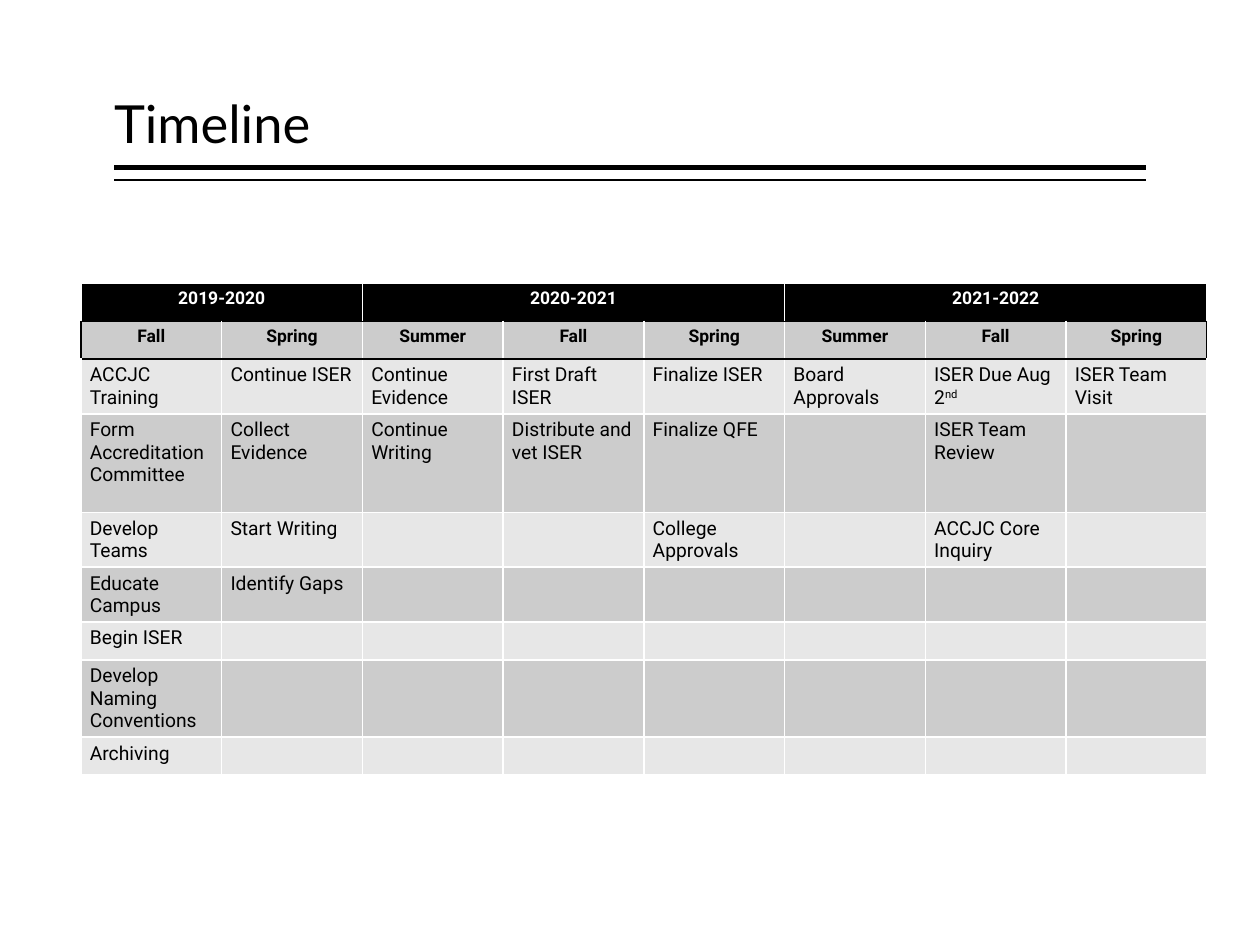
from dataclasses import dataclass

from lxml.etree import SubElement as Sub
from pptx import Presentation
from pptx.dml.color import RGBColor as RGB
from pptx.enum.shapes import MSO_CONNECTOR as Link
from pptx.enum.text import MSO_ANCHOR as Anchor, MSO_AUTO_SIZE as Fit, PP_ALIGN as Align
from pptx.oxml.ns import qn
from pptx.util import Cm, Pt


@dataclass(frozen=True)
class Theme:
    """Colours, fonts and type sizes."""
    ink: str = "000000"
    paper: str = "FFFFFF"
    dark: str = "CCCCCC"
    light: str = "E7E7E7"
    head: str = "Lato"
    body: str = "Roboto"
    title: int = 30
    label: int = 10
    text: int = 11


@dataclass(frozen=True)
class Box:
    """A region in centimetres."""
    x: float
    y: float
    w: float
    h: float


LOOK = Theme()
YEARS = [("2019-2020", 2), ("2020-2021", 3), ("2021-2022", 3)]
TERMS = ["Fall", "Spring"] + ["Summer", "Fall", "Spring"] * 2
TASKS = [
    ["ACCJC Training", "Continue ISER", "Continue Evidence", "First Draft ISER",
     "Finalize ISER", "Board Approvals", "ISER Due Aug 2^nd", "ISER Team Visit"],
    ["Form Accreditation\nCommittee", "Collect Evidence", "Continue Writing",
     "Distribute and vet ISER", "Finalize QFE", "", "ISER Team Review", ""],
    ["Develop Teams", "Start Writing", "", "", "College Approvals", "",
     "ACCJC Core Inquiry", ""],
    ["Educate Campus", "Identify Gaps"],
    ["Begin ISER"],
    ["Develop Naming Conventions"],
    ["Archiving"],
]
ROWS = [0.76, 0.76, 1.08, 1.98, 1.08, 1.08, 0.76, 1.52, 0.76]


def apply(item, form):
    """Set each attribute named in the format dict."""
    for name, value in form.items():
        setattr(item, name, value)


def style(font, face, size, tint, bold=False):
    """Format a font."""
    apply(font, {"name": face, "size": Pt(size), "bold": bold})
    font.color.rgb = RGB.from_string(tint)


def rule(slide, x, y, w, width):
    """Draw a level line of the given weight."""
    line = slide.shapes.add_connector(Link.STRAIGHT, Cm(x), Cm(y), Cm(x + w), Cm(y))
    line.line.width = Pt(width)
    line.line.color.rgb = RGB.from_string(LOOK.ink)
    Sub(line._element.spPr, qn("a:effectLst"))


def header(slide, box):
    """Place the title with a thick and a thin rule under it."""
    title = slide.shapes.title
    apply(title, {"left": Cm(box.x), "top": Cm(box.y), "width": Cm(box.w), "height": Cm(box.h)})
    frame = title.text_frame
    frame.text = "Timeline"
    apply(frame, {"vertical_anchor": Anchor.BOTTOM, "auto_size": Fit.NONE, "word_wrap": True,
                  "margin_left": 0, "margin_right": 0,
                  "margin_top": Cm(0.13), "margin_bottom": Cm(0.13)})
    para = frame.paragraphs[0]
    apply(para, {"alignment": Align.LEFT, "line_spacing": 0.9})
    style(para.runs[0].font, LOOK.head, LOOK.title, LOOK.ink)
    for gap, width in ((0.13, 3), (0.38, 1)):
        rule(slide, box.x, box.y + box.h + gap, box.w, width)


def border(cell, sides):
    """Draw the cell edges in the given colours."""
    props = cell._tc.get_or_add_tcPr()
    for side in "LRTB":
        edge = Sub(props, qn(f"a:ln{side}"), w=str(Pt(1)))
        Sub(Sub(edge, qn("a:solidFill")), qn("a:srgbClr"), val=sides.get(side, LOOK.paper))


def write(para, text, size, tint, bold):
    """Fill a paragraph, raising what follows a caret."""
    base, _, high = text.partition("^")
    for part, lift in ((base, 0), (high, 30000)):
        if part:
            run = para.add_run()
            run.text = part
            style(run.font, LOOK.body, size, tint, bold)
            if lift:
                run._r.get_or_add_rPr().set("baseline", str(lift))
    if not text:
        Sub(para._p, qn("a:endParaRPr"), sz=str(size * 100))


def paint(cell, text, fill, tint, size, sides, bold=False):
    """Format one table cell."""
    apply(cell, {"margin_left": Cm(0.18), "margin_right": Cm(0.18),
                 "margin_top": Cm(0.1), "margin_bottom": Cm(0.1)})
    border(cell, sides)
    cell.fill.solid()
    cell.fill.fore_color.rgb = RGB.from_string(fill)
    for i, line in enumerate(text.split("\n")):
        para = cell.text_frame.add_paragraph() if i else cell.text_frame.paragraphs[0]
        para.alignment = Align.CENTER if bold else Align.LEFT
        write(para, line, size, tint, bold)


def plan(slide, box):
    """Place the timeline table of years, terms and tasks."""
    count = len(TERMS)
    grid = slide.shapes.add_table(len(ROWS), count, Cm(box.x), Cm(box.y),
                                  Cm(box.w), Cm(box.h)).table
    apply(grid, {"first_row": False, "horz_banding": False})
    for col in grid.columns:
        col.width = Cm(box.w / count)
    for row, tall in zip(grid.rows, ROWS):
        row.height = Cm(tall)

    years = [text for name, span in YEARS for text in [name] + [""] * (span - 1)]
    for c, (year, term) in enumerate(zip(years, TERMS)):
        paint(grid.cell(0, c), year, LOOK.ink, LOOK.paper, LOOK.label, {"B": LOOK.ink}, True)
        sides = {"T": LOOK.ink, "B": LOOK.ink}
        if c in (0, count - 1):
            sides["R" if c else "L"] = LOOK.ink
        paint(grid.cell(1, c), term, LOOK.dark, LOOK.ink, LOOK.label, sides, True)
    start = 0
    for _, span in YEARS:
        grid.cell(0, start).merge(grid.cell(0, start + span - 1))
        start += span

    for r, tasks in enumerate(TASKS):
        fill = LOOK.dark if r % 2 else LOOK.light
        sides = {} if r else {"T": LOOK.ink}
        for c in range(count):
            text = tasks[c] if c < len(tasks) else ""
            paint(grid.cell(r + 2, c), text, fill, LOOK.ink, LOOK.text, sides)


def main():
    """Build and save the slide."""
    deck = Presentation()
    apply(deck, {"slide_width": Cm(25.4), "slide_height": Cm(19.05)})
    slide = deck.slides.add_slide(deck.slide_layouts[5])
    header(slide, Box(2.3, 0.2, 20.8, 3.05))
    plan(slide, Box(1.63, 5.72, 22.7, sum(ROWS)))
    deck.save("out.pptx")


if __name__ == "__main__":
    main()
